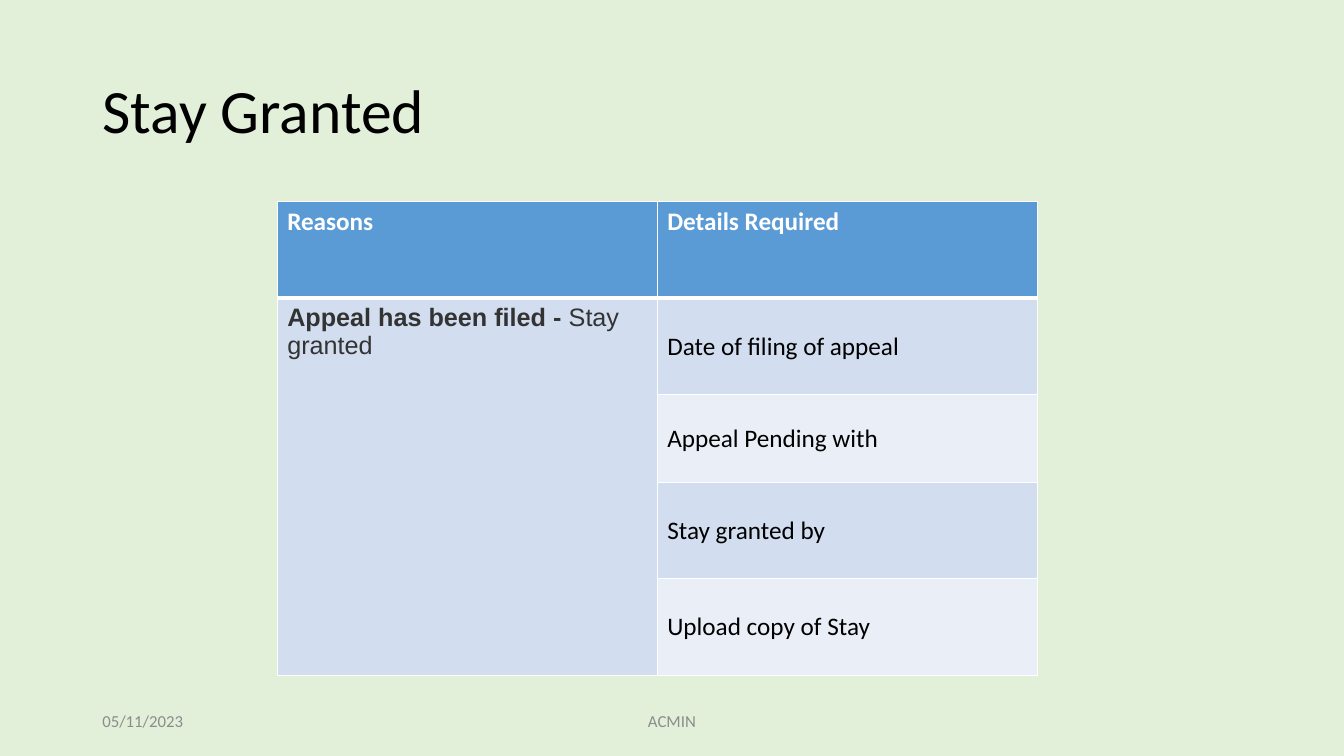
import pptx
import pptx.dml.color
import pptx.enum.text
import pptx.oxml
import pptx.oxml.ns
import pptx.util

Pt = pptx.util.Pt
ALIGN = pptx.enum.text.PP_ALIGN
ANCHOR = pptx.enum.text.MSO_ANCHOR

HEADER_FILL, BAND_FILLS = "5B9BD5", ("D2DEEF", "EAEFF7")
HEADINGS = ("Reasons", "Details Required")
REASON = (("Appeal has been filed - ", True), ("Stay granted", False))
DETAILS = ("Date of filing of appeal", "Appeal Pending with",
           "Stay granted by", "Upload copy of Stay")
ROW_HEIGHTS = (69, 69, 62.5, 69, 69)


def rgb(value):
    return pptx.dml.color.RGBColor.from_string(value)


def add_run(p, text, color, **fmt):
    r = p.add_run()
    r.text = text
    for name, value in {"name": "Calibri", "size": Pt(18), "bold": False, **fmt}.items():
        setattr(r.font, name, value)
    r.font.color.rgb = rgb(color)


def paint(cell, fill, bottom=1):
    """Fill a cell and give it white borders; bottom is the lower border in points."""
    tc_pr = cell._tc.get_or_add_tcPr()
    for side, width in (("L", 1), ("R", 1), ("T", 1), ("B", bottom)):
        tc_pr.append(pptx.oxml.parse_xml(
            f'<a:ln{side} {pptx.oxml.ns.nsdecls("a")} w="{Pt(width)}"><a:solidFill>'
            f'<a:srgbClr val="FFFFFF"/></a:solidFill></a:ln{side}>'))
    cell.fill.solid()
    cell.fill.fore_color.rgb = rgb(fill)


def add_title(s, text, x, y, w, h):
    sp = s.shapes.title
    for name, value in {"left": x, "top": y, "width": w, "height": h}.items():
        setattr(sp, name, Pt(value))
    tf = sp.text_frame
    tf.auto_size = pptx.enum.text.MSO_AUTO_SIZE.NONE
    tf.vertical_anchor = ANCHOR.MIDDLE
    p = tf.paragraphs[0]
    p.alignment, p.line_spacing = ALIGN.LEFT, 0.9
    add_run(p, text, "000000", size=Pt(44))


def add_stay_table(s, x, y, w):
    rows = len(ROW_HEIGHTS)
    table = s.shapes.add_table(rows, 2, Pt(x), Pt(y), Pt(w), Pt(sum(ROW_HEIGHTS))).table
    for row, height in zip(table.rows, ROW_HEIGHTS):
        row.height = Pt(height)
    for col, heading in enumerate(HEADINGS):
        cell = table.cell(0, col)
        paint(cell, HEADER_FILL, bottom=3)
        add_run(cell.text_frame.paragraphs[0], heading, "FFFFFF", bold=True)

    reason = table.cell(1, 0)
    reason.merge(table.cell(rows - 1, 0))
    for text, bold in REASON:
        add_run(reason.text_frame.paragraphs[0], text, "333333", name="Arial", bold=bold)
    for i, detail in enumerate(DETAILS):
        paint(table.cell(i + 1, 0), BAND_FILLS[0])
        cell = table.cell(i + 1, 1)
        paint(cell, BAND_FILLS[i % 2])
        cell.vertical_anchor = ANCHOR.MIDDLE
        add_run(cell.text_frame.paragraphs[0], detail, "000000")


def add_footer_text(s, text, x, y, w, h, align):
    tf = s.shapes.add_textbox(Pt(x), Pt(y), Pt(w), Pt(h)).text_frame
    tf.word_wrap = True
    tf.vertical_anchor = ANCHOR.MIDDLE
    p = tf.paragraphs[0]
    p.alignment = align
    add_run(p, text, "8C8C8C", size=Pt(12))


def main():
    prs = pptx.Presentation()
    prs.slide_width, prs.slide_height = Pt(960), Pt(540)
    s = prs.slides.add_slide(prs.slide_layouts[5])
    s.background.fill.solid()
    s.background.fill.fore_color.rgb = rgb("E2F0D9")
    add_title(s, "Stay Granted", 66, 28.75, 828, 104.4)
    add_stay_table(s, 198, 144, 543)
    add_footer_text(s, "05/11/2023", 66, 500.5, 216, 28.75, ALIGN.LEFT)
    add_footer_text(s, "ACMIN", 318, 500.5, 324, 28.75, ALIGN.CENTER)
    prs.save("out.pptx")


if __name__ == "__main__":
    main()
